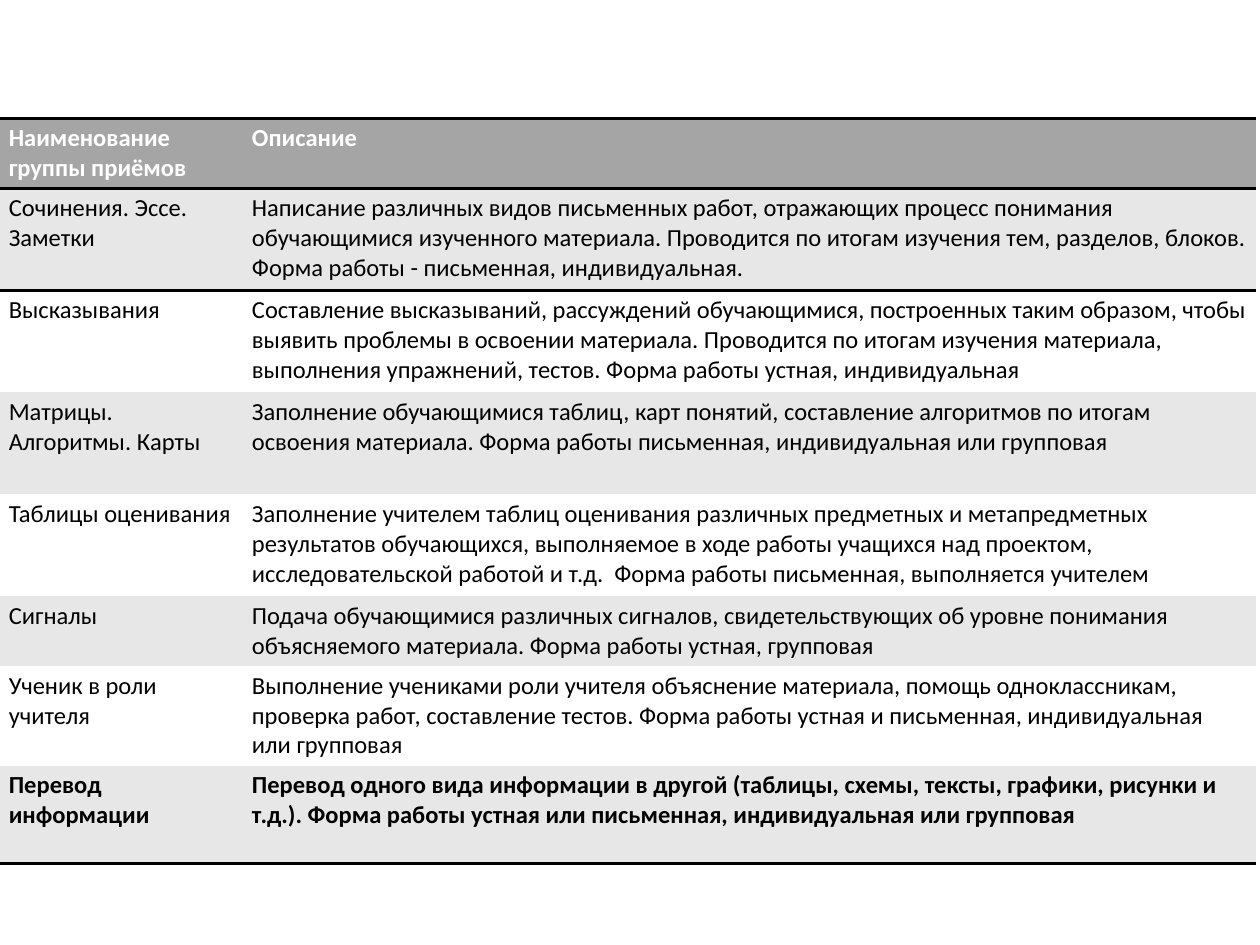
from lxml.etree import SubElement
from pptx import Presentation
from pptx.dml.color import RGBColor
from pptx.oxml.ns import qn
from pptx.util import Inches, Pt

BLACK, WHITE = "000000", "FFFFFF"
HEADER_GRAY, BAND_GRAY = "A5A5A5", "E7E7E7"
RULE_WIDTH = Pt(2)

COLUMN_WIDTHS = [1.93, 8.04]
ROW_HEIGHTS = [0.55, 0.81, 0.81, 0.81, 0.81, 0.55, 0.79, 0.78]

TECHNIQUES = [
    ("Наименование группы приёмов", "Описание"),
    ("Сочинения. Эссе.\nЗаметки",
     "Написание различных видов письменных работ, отражающих процесс понимания "
     "обучающимися изученного материала. Проводится по итогам изучения тем, "
     "разделов, блоков. Форма работы - письменная, индивидуальная."),
    ("Высказывания",
     "Составление высказываний, рассуждений обучающимися, построенных таким "
     "образом, чтобы выявить проблемы в освоении материала. Проводится по итогам "
     "изучения материала, выполнения упражнений, тестов. Форма работы устная, "
     "индивидуальная"),
    ("Матрицы. Алгоритмы. Карты",
     "Заполнение обучающимися таблиц, карт понятий, составление алгоритмов по "
     "итогам освоения материала. Форма работы письменная, индивидуальная или "
     "групповая"),
    ("Таблицы оценивания",
     "Заполнение учителем таблиц оценивания различных предметных и "
     "метапредметных результатов обучающихся, выполняемое в ходе работы учащихся "
     "над проектом, исследовательской работой и т.д.  Форма работы письменная, "
     "выполняется учителем"),
    ("Сигналы",
     "Подача обучающимися различных сигналов, свидетельствующих об уровне "
     "понимания объясняемого материала. Форма работы устная, групповая"),
    ("Ученик в роли учителя",
     "Выполнение учениками роли учителя объяснение материала, помощь "
     "одноклассникам, проверка работ, составление тестов. Форма работы устная и "
     "письменная, индивидуальная или групповая"),
    ("Перевод информации",
     "Перевод одного вида информации в другой (таблицы, схемы, тексты, графики, "
     "рисунки и т.д.). Форма работы устная или письменная, индивидуальная или "
     "групповая"),
]


def color(hex_value):
    return RGBColor.from_string(hex_value)


def add_rule(cell, side):
    """Draw a black border on one side of a cell: lnT or lnB."""
    rule = SubElement(cell._tc.get_or_add_tcPr(), qn(f"a:{side}"), w=str(RULE_WIDTH))
    SubElement(SubElement(rule, qn("a:solidFill")), qn("a:srgbClr"), val=BLACK)


def fill_cell(cell, text, background, text_color, bold, rules):
    cell.margin_left = cell.margin_right = Inches(0.07)
    cell.margin_top = cell.margin_bottom = Inches(0.04)

    # Borders come before the fill in the cell properties
    for side in rules:
        add_rule(cell, side)
    cell.fill.solid()
    cell.fill.fore_color.rgb = color(background)

    cell.text = text
    for paragraph in cell.text_frame.paragraphs:
        font = paragraph.font
        font.name, font.size, font.bold = "Calibri", Pt(14), bold
        font.color.rgb = color(text_color)


def add_techniques_table(slide):
    table = slide.shapes.add_table(
        len(TECHNIQUES), len(COLUMN_WIDTHS), Inches(0), Inches(0.94),
        Inches(sum(COLUMN_WIDTHS)), Inches(sum(ROW_HEIGHTS))).table
    for column, width in zip(table.columns, COLUMN_WIDTHS):
        column.width = Inches(width)

    last = len(TECHNIQUES) - 1
    for index, (row, height) in enumerate(zip(table.rows, ROW_HEIGHTS)):
        row.height = Inches(height)
        # Header, then alternating bands; the last technique is emphasised
        if index == 0:
            background, text_color, rules = HEADER_GRAY, WHITE, ["lnT", "lnB"]
        else:
            background = BAND_GRAY if index % 2 else WHITE
            text_color = BLACK
            rules = {1: ["lnT"], last: ["lnB"]}.get(index, [])
        for cell, text in zip(row.cells, TECHNIQUES[index]):
            fill_cell(cell, text, background, text_color, index in (0, last), rules)

    # Plain style: no white grid lines between the cells
    style_id = table._tbl.tblPr.find(qn("a:tableStyleId"))
    style_id.text = "{2D5ABB26-0587-4C30-8999-92F81FD0307C}"


def main():
    prs = Presentation()
    prs.slide_width, prs.slide_height = Inches(10), Inches(7.5)
    slide = prs.slides.add_slide(prs.slide_layouts[6])
    add_techniques_table(slide)
    prs.save("out.pptx")


if __name__ == "__main__":
    main()
